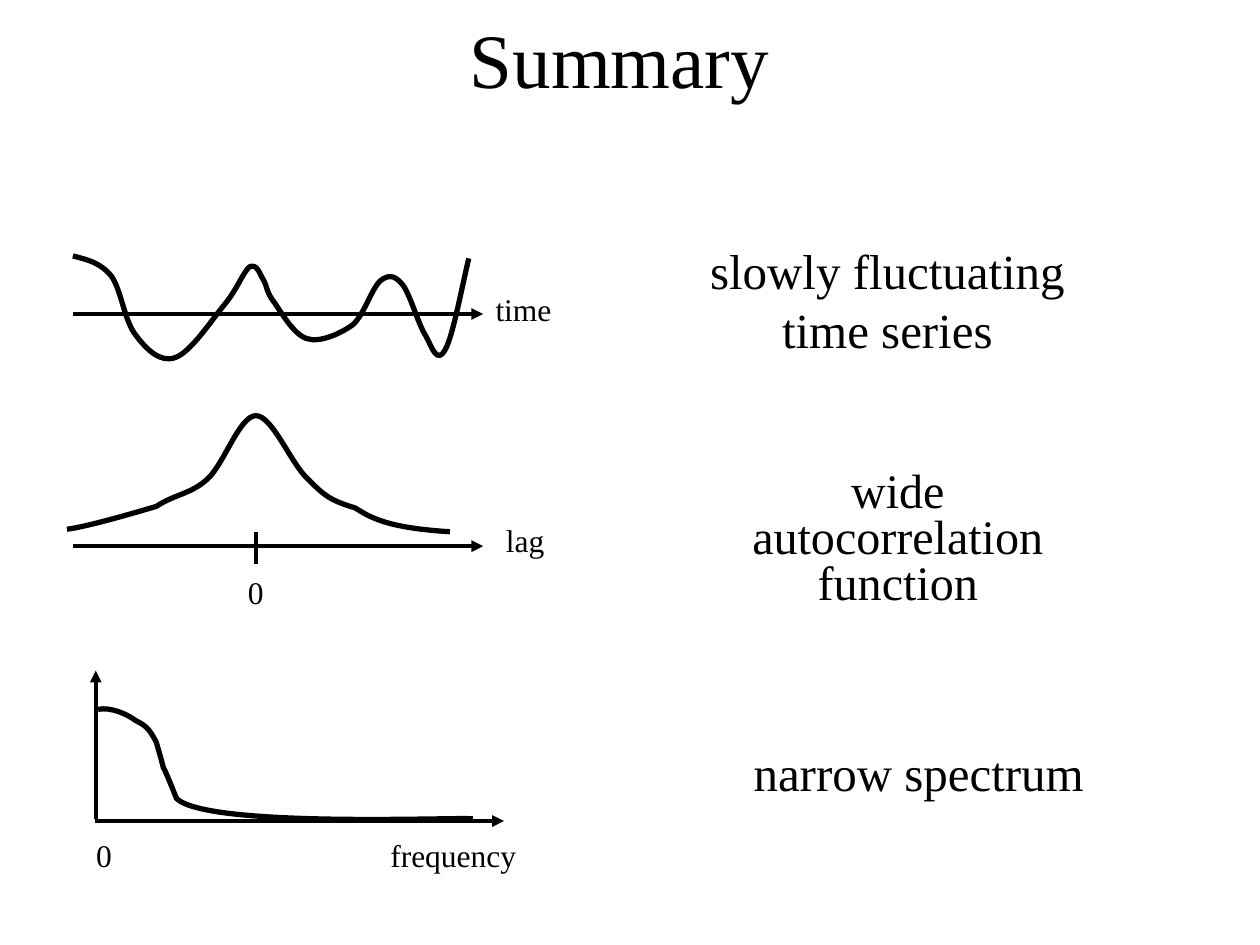
"""Builds a summary slide of a slow time series, its autocorrelation and its spectrum."""
from lxml.etree import SubElement
from pptx import Presentation
from pptx.dml.color import RGBColor
from pptx.enum.shapes import MSO_CONNECTOR
from pptx.enum.text import MSO_ANCHOR, MSO_AUTO_SIZE, PP_ALIGN
from pptx.oxml.ns import qn
from pptx.util import Cm, Pt

COLORS = {"ink": "000000"}
FONT = "Times New Roman"


def write(paragraph, text, size):
    """Adds one run of text in the slide's font."""
    run = paragraph.add_run()
    run.text = text
    run.font.name = FONT
    run.font.size = Pt(size)
    run.font.color.rgb = RGBColor.from_string(COLORS["ink"])


def bend(shape):
    """Turns every three straight segments of a freeform into one cubic curve."""
    outline = next(shape._element.iter(qn("a:path")))
    segments = outline.findall(qn("a:lnTo"))
    for index in range(0, len(segments), 3):
        cubic = SubElement(outline, qn("a:cubicBezTo"))
        for segment in segments[index:index + 3]:
            cubic.append(segment[0])
            outline.remove(segment)


presentation = Presentation()
presentation.slide_width = Cm(25.4)
presentation.slide_height = Cm(19.05)
slide = presentation.slides.add_slide(presentation.slide_layouts[5])

title = slide.shapes.title
title.left, title.top, title.width, title.height = Cm(1.06), Cm(0), Cm(22.86), Cm(2.33)
title.text_frame.vertical_anchor = MSO_ANCHOR.MIDDLE
title.text_frame.paragraphs[0].alignment = PP_ALIGN.CENTER
write(title.text_frame.paragraphs[0], "Summary", 44)

axes = [
    ((1.48, 6.33), (9.74, 6.33), True),
    ((1.48, 11.01), (9.74, 11.01), True),
    ((5.16, 10.73), (5.16, 11.36), False),
    ((1.91, 16.55), (10.16, 16.55), True),
    ((1.93, 16.52), (1.93, 13.52), True),
]
for start, end, has_arrow in axes:
    axis = slide.shapes.add_connector(
        MSO_CONNECTOR.STRAIGHT, *(Cm(value) for value in start + end)
    )
    axis.line.width = Pt(2.25)
    axis.line.color.rgb = RGBColor.from_string(COLORS["ink"])
    if has_arrow:
        SubElement(axis.line._get_or_add_ln(), qn("a:tailEnd"), type="triangle")
    SubElement(axis._element.spPr, qn("a:effectLst"))

time_series = [
    (1.47, 5.16),
    (1.73, 5.23), (2.01, 5.28), (2.24, 5.56),
    (2.44, 5.82), (2.51, 6.48), (2.74, 6.76),
    (2.95, 7.04), (3.23, 7.32), (3.53, 7.21),
    (3.84, 7.11), (4.27, 6.45), (4.52, 6.15),
    (4.78, 5.84), (4.9, 5.49), (5.03, 5.38),
    (5.18, 5.31), (5.23, 5.51), (5.31, 5.64),
    (5.38, 5.74), (5.36, 5.87), (5.51, 6.07),
    (5.66, 6.27), (5.92, 6.76), (6.2, 6.83),
    (6.45, 6.91), (6.86, 6.73), (7.11, 6.55),
    (7.34, 6.35), (7.49, 5.82), (7.67, 5.66),
    (7.82, 5.54), (7.95, 5.54), (8.1, 5.72),
    (8.26, 5.89), (8.43, 6.55), (8.59, 6.78),
    (8.71, 7.01), (8.81, 7.34), (8.97, 7.06),
    (9.12, 6.81), (9.27, 5.99), (9.45, 5.21),
]
autocorrelation = [
    (1.35, 10.67),
    (1.75, 10.62), (2.64, 10.36), (3.15, 10.21),
    (3.53, 9.96), (3.86, 9.96), (4.19, 9.65),
    (4.52, 9.35), (4.83, 8.38), (5.16, 8.38),
    (5.49, 8.38), (5.87, 9.35), (6.2, 9.65),
    (6.53, 9.98), (6.63, 10.08), (7.16, 10.24),
    (7.44, 10.41), (7.75, 10.64), (9.07, 10.72),
]
spectrum = [
    (1.98, 14.3),
    (2.24, 14.25), (2.57, 14.4), (2.74, 14.53),
    (2.95, 14.63), (3.02, 14.71), (3.15, 14.96),
    (3.45, 15.98), (3.1, 14.94), (3.56, 16.1),
    (4.22, 16.71), (9.45, 16.46), (9.53, 16.51),
]
for points in (time_series, autocorrelation, spectrum):
    start, *controls = [(Cm(x), Cm(y)) for x, y in points]
    builder = slide.shapes.build_freeform(*start)
    builder.add_line_segments(controls, close=False)
    curve = builder.convert_to_shape()
    bend(curve)
    curve.shadow.inherit = False
    curve.fill.background()
    curve.line.width = Pt(3)
    curve.line.color.rgb = RGBColor.from_string(COLORS["ink"])

labels = [
    ("time", 9.74, 5.72, 1.7, False),
    ("lag", 9.95, 10.37, 1.3, False),
    ("0", 4.75, 11.43, 0.84, False),
    ("frequency", 7.62, 16.72, 3.81, True),
    ("0", 1.69, 16.72, 0.84, False),
]
for text, left, top, width, wraps in labels:
    label = slide.shapes.add_textbox(Cm(left), Cm(top), Cm(width), Cm(1.02))
    label.text_frame.word_wrap = wraps
    label.text_frame.auto_size = MSO_AUTO_SIZE.SHAPE_TO_FIT_TEXT
    write(label.text_frame.paragraphs[0], text, 18)

descriptions = [
    ("slowly fluctuating time series", 13.76, 4.45, 28, 1),
    ("wide autocorrelation function", 13.97, 9.31, 27.5, 0.8),
    ("narrow spectrum", 14.39, 13.97, 28, 1),
]
for text, left, top, size, spacing in descriptions:
    description = slide.shapes.add_textbox(Cm(left), Cm(top), Cm(8.26), Cm(3.18))
    description.text_frame.word_wrap = True
    description.text_frame.vertical_anchor = MSO_ANCHOR.MIDDLE
    paragraph = description.text_frame.paragraphs[0]
    paragraph.alignment = PP_ALIGN.CENTER
    paragraph.line_spacing = spacing
    write(paragraph, text, size)

presentation.save("out.pptx")
